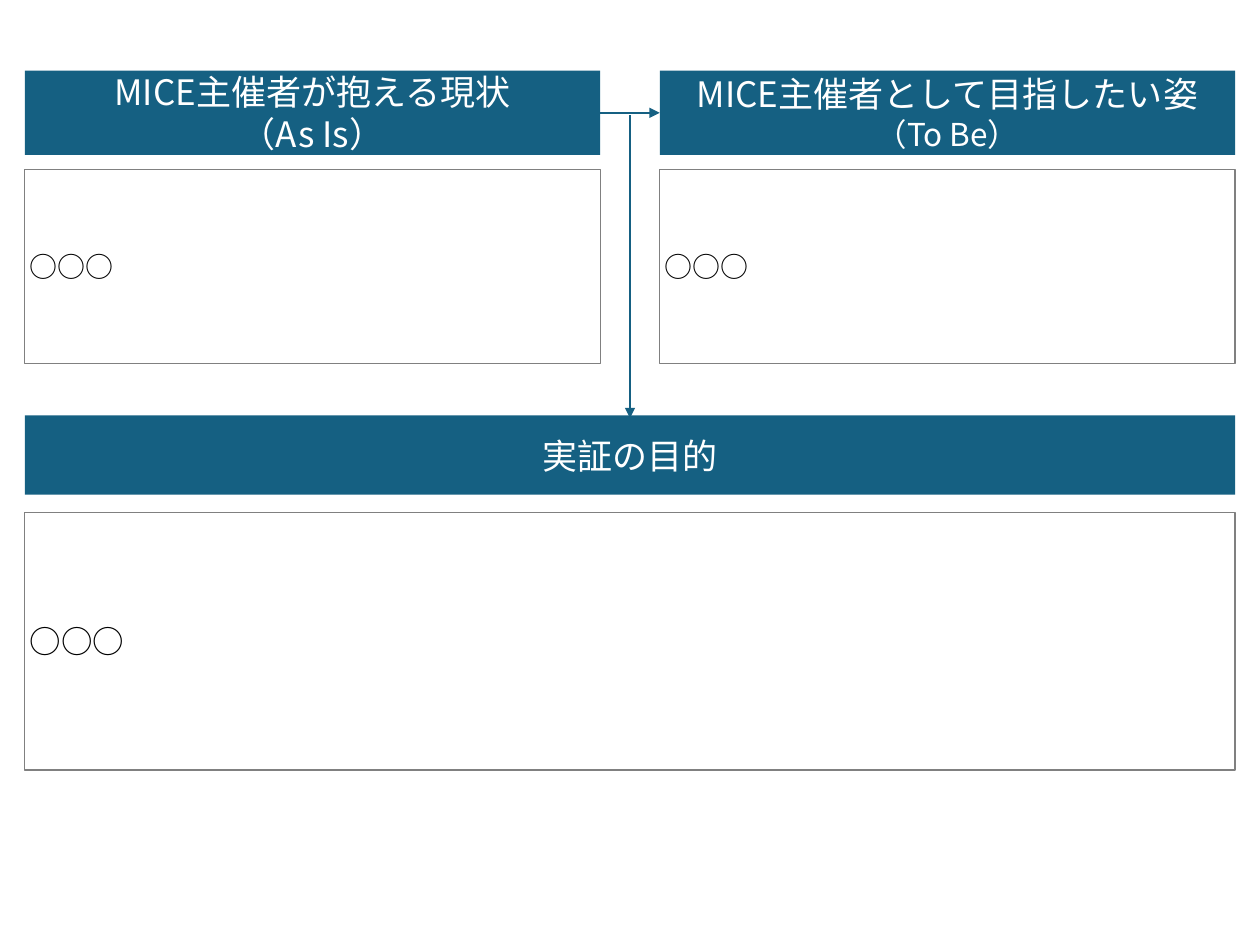
"""Build the As Is / To Be slide that leads to the purpose of the trial."""
import pptx
import pptx.dml.color
import pptx.enum.shapes
import pptx.enum.text
import pptx.oxml
import pptx.oxml.ns
import pptx.util

Pt = pptx.util.Pt
ALIGN = pptx.enum.text.PP_ALIGN
FONT = "Noto Sans CJK JP"
COLORS = {"teal": "156082", "gray": "808080", "black": "000000", "white": "FFFFFF"}


def color(name):
    return pptx.dml.color.RGBColor.from_string(COLORS[name])


def write(box, text, sizes, ink, align):
    frame = box.text_frame
    frame.word_wrap = True
    frame.vertical_anchor = pptx.enum.text.MSO_ANCHOR.MIDDLE
    frame.margin_left = frame.margin_right = Pt(2.88)
    frame.margin_top = frame.margin_bottom = Pt(2.88)
    para = frame.paragraphs[0]
    para.alignment = align
    for number, (line, size) in enumerate(zip(text.split("\n"), sizes)):
        if number:
            para.add_line_break()
        span = para.add_run()
        span.text = line
        span.font.size = Pt(size)
        span.font.name = FONT
        span.font.color.rgb = color(ink)
        east_asian = pptx.oxml.ns.qn("a:ea")
        span.font._element.makeelement(east_asian)
        latin = span.font._element.find(pptx.oxml.ns.qn("a:latin"))
        latin.addnext(latin.makeelement(east_asian, {"typeface": FONT}))


deck = pptx.Presentation()
deck.slide_width, deck.slide_height = Pt(720), Pt(540)
page = deck.slides.add_slide(deck.slide_layouts[6])

left, right, column, full = 14.2, 377, 328.8, 691.6
panels = [
    (left, column, 40.4, 48.2, "MICE主催者が抱える現状\n（As Is）", (20, 20), 97, 110.8, 16),
    (right, column, 40.4, 48.2, "MICE主催者として目指したい姿\n（To Be）", (20, 18), 97, 110.8, 16),
    (left, full, 237.4, 45.2, "実証の目的", (20,), 292.8, 147.2, 18),
]
for x, width, head_top, head_height, title, sizes, body_top, body_height, body_size in panels:
    header, body = [
        page.shapes.add_shape(
            pptx.enum.shapes.MSO_SHAPE.RECTANGLE, Pt(x), Pt(top), Pt(width), Pt(height)
        )
        for top, height in ((head_top, head_height), (body_top, body_height))
    ]
    header.shadow.inherit = body.shadow.inherit = False
    header.fill.solid()
    header.fill.fore_color.rgb = color("teal")
    header.line.fill.background()
    body.fill.background()
    body.line.color.rgb = color("gray")
    body.line.width = Pt(0.75)
    write(header, title, sizes, "white", ALIGN.CENTER)
    write(body, "○○○", (body_size,), "black", ALIGN.JUSTIFY)

arrows = [
    (left + column, 64.5, right, 64.5, 1),
    (360, 66, 360, 239, 1.5),
]
for x1, y1, x2, y2, weight in arrows:
    arrow = page.shapes.add_connector(
        pptx.enum.shapes.MSO_CONNECTOR.STRAIGHT, Pt(x1), Pt(y1), Pt(x2), Pt(y2)
    )
    arrow.line.color.rgb = color("teal")
    arrow.line.width = Pt(weight)
    outline = arrow.line._get_or_add_ln()
    outline.append(outline.makeelement(pptx.oxml.ns.qn("a:tailEnd"), {"type": "triangle"}))
    outline.addnext(outline.makeelement(pptx.oxml.ns.qn("a:effectLst")))

deck.save("out.pptx")
